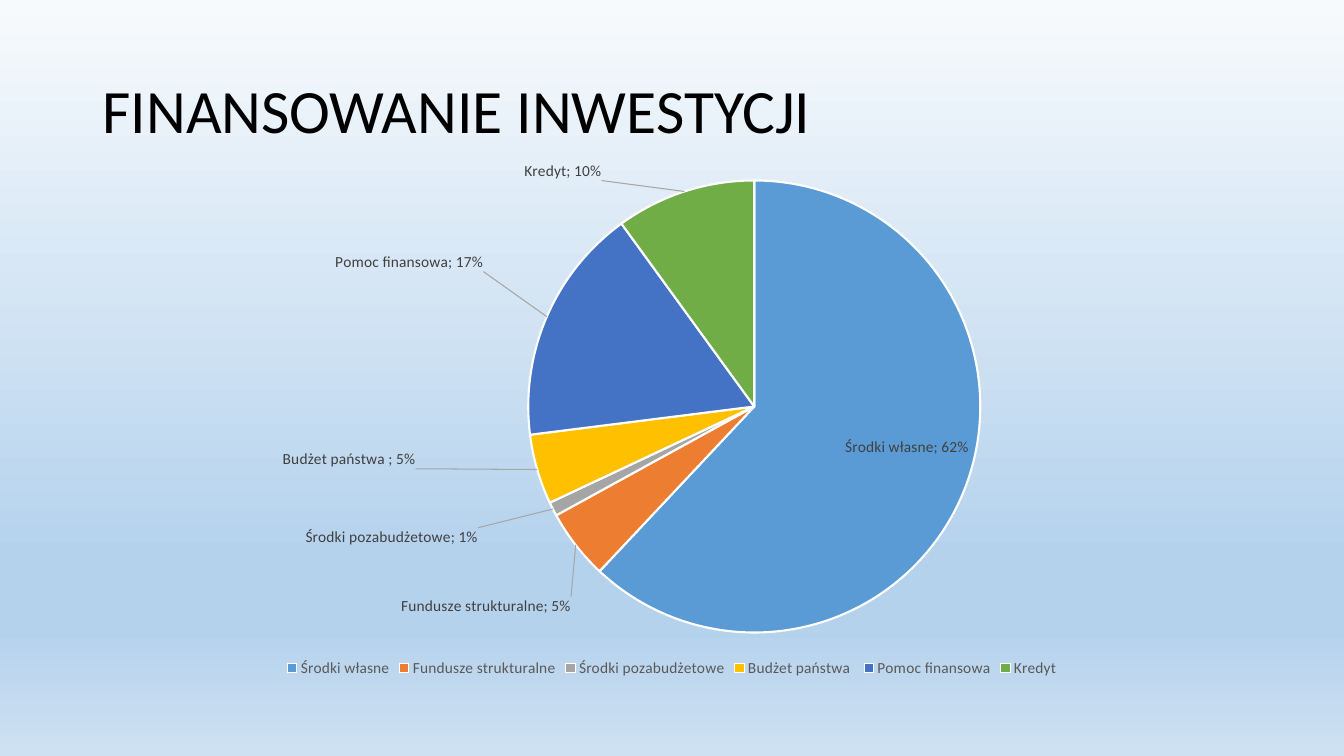
"""Build the slide with a pie chart of investment financing sources."""
from copy import deepcopy

from lxml import etree
from pptx import Presentation
from pptx.chart.data import CategoryChartData
from pptx.dml.color import RGBColor as Rgb
from pptx.enum.chart import XL_CHART_TYPE as ChartType
from pptx.enum.chart import XL_LABEL_POSITION as LabelPosition
from pptx.enum.chart import XL_LEGEND_POSITION as LegendPosition
from pptx.enum.text import MSO_ANCHOR as Anchor
from pptx.enum.text import PP_ALIGN as Align
from pptx.oxml import parse_xml
from pptx.oxml.ns import qn
from pptx.util import Cm, Pt

COLORS = {
    "title": "000000", "label": "404040", "legend": "595959",
    "leader": "A6A6A6", "border": "FFFFFF",
    "sky_top": "F7FAFD", "sky_deep": "B5D2EC", "sky_low": "CEE1F2",
}
SOURCES = [
    ("Środki własne", 0.62, "5B9BD5", None),
    ("Fundusze strukturalne", 0.05, "ED7D31", (0.0, 0.09)),
    ("Środki pozabudżetowe", 0.01, "A5A5A5", (-0.06, 0.03)),
    ("Budżet państwa ", 0.05, "FFC000", (-0.1, -0.04)),
    ("Pomoc finansowa", 0.17, "4472C4", (-0.05, -0.08)),
    ("Kredyt", 0.10, "70AD47", (-0.07, -0.01)),
]
BACKDROP = [(0, "sky_top"), (74, "sky_deep"), (83, "sky_deep"), (100, "sky_low")]
CHART_NS = 'xmlns:c="http://schemas.openxmlformats.org/drawingml/2006/chart"'
DRAW_NS = 'xmlns:a="http://schemas.openxmlformats.org/drawingml/2006/main"'


def style_font(font, size, color):
    values = {"name": "Calibri", "size": Pt(size), "bold": False}
    for name, value in values.items():
        setattr(font, name, value)
    font.color.rgb = Rgb.from_string(COLORS[color])


def manual_layout(modes="", **values):
    fields = "".join(f'<c:{key} val="{value}"/>' for key, value in values.items())
    return parse_xml(f"<c:layout {CHART_NS}><c:manualLayout>{modes}{fields}"
                     "</c:manualLayout></c:layout>")


deck = Presentation()
deck.slide_width, deck.slide_height = Cm(33.87), Cm(19.05)
page = deck.slides.add_slide(deck.slide_layouts[5])

backdrop = page.background.fill
backdrop.gradient()
backdrop.gradient_angle = 270
stop_list = page.background._cSld.find(".//" + qn("a:gsLst"))
for stop in list(stop_list):
    stop_list.remove(stop)
for percent, color in BACKDROP:
    stop = etree.SubElement(stop_list, qn("a:gs"), pos=str(percent * 1000))
    etree.SubElement(stop, qn("a:srgbClr"), val=COLORS[color])

title = page.shapes.title
place = {"left": Cm(2.33), "top": Cm(1.01), "width": Cm(29.21), "height": Cm(3.68)}
for name, value in place.items():
    setattr(title, name, value)
title.text_frame.text = "FINANSOWANIE INWESTYCJI"
title.text_frame.vertical_anchor = Anchor.MIDDLE
para = title.text_frame.paragraphs[0]
para.alignment = Align.LEFT
para.line_spacing = 0.9
style_font(para.runs[0].font, 44, "title")

data = CategoryChartData(number_format="0%")
data.categories = [source[0] for source in SOURCES]
data.add_series("Series 1", [source[1] for source in SOURCES])
chart = page.shapes.add_chart(
    ChartType.PIE, Cm(2.33), Cm(3.71), Cm(29.21), Cm(13.46), data).chart
style_font(chart.font, 10, "title")
chart.has_title = False
chart.has_legend = True
chart.legend.position = LegendPosition.BOTTOM
chart.legend.include_in_layout = False
style_font(chart.legend.font, 11, "legend")

plot = chart.plots[0]
plot.vary_by_categories = True
plot_area = chart._chartSpace.find(".//" + qn("c:plotArea"))
for layout in plot_area.findall(qn("c:layout")):
    plot_area.remove(layout)
modes = ('<c:layoutTarget val="inner"/><c:xMode val="edge"/>'
         '<c:yMode val="edge"/>')
plot_area.insert(0, manual_layout(modes, x=0.376, y=0.062, w=0.39, h=0.847))

series = plot.series[0]
labels = series.data_labels
settings = {
    "show_value": True, "show_category_name": True, "show_percentage": False,
    "number_format": "0%", "number_format_is_linked": False,
    "position": LabelPosition.BEST_FIT,
}
for name, value in settings.items():
    setattr(labels, name, value)
style_font(labels.font, 11, "label")

label_list = labels._element
separator = parse_xml(f"<c:separator {CHART_NS}>; </c:separator>")
label_list.find(qn("c:showBubbleSize")).addnext(separator)
shared = [item for item in label_list if item.tag != qn("c:showLeaderLines")]
label_list.append(parse_xml(
    f'<c:leaderLines {CHART_NS} {DRAW_NS}><c:spPr><a:ln w="9525"><a:solidFill>'
    f'<a:srgbClr val="{COLORS["leader"]}"/></a:solidFill></a:ln></c:spPr>'
    "</c:leaderLines>"))

for index, (source, share, color, shift) in enumerate(SOURCES):
    slice_format = series.points[index].format
    slice_format.fill.solid()
    slice_format.fill.fore_color.rgb = Rgb.from_string(color)
    slice_format.line.width = Pt(1.5)
    slice_format.line.color.rgb = Rgb.from_string(COLORS["border"])
    if shift:
        label = parse_xml(f'<c:dLbl {CHART_NS}><c:idx val="{index}"/></c:dLbl>')
        label.append(manual_layout(x=shift[0], y=shift[1]))
        label.extend([deepcopy(item) for item in shared])
        shared[0].addprevious(label)

deck.save("out.pptx")
